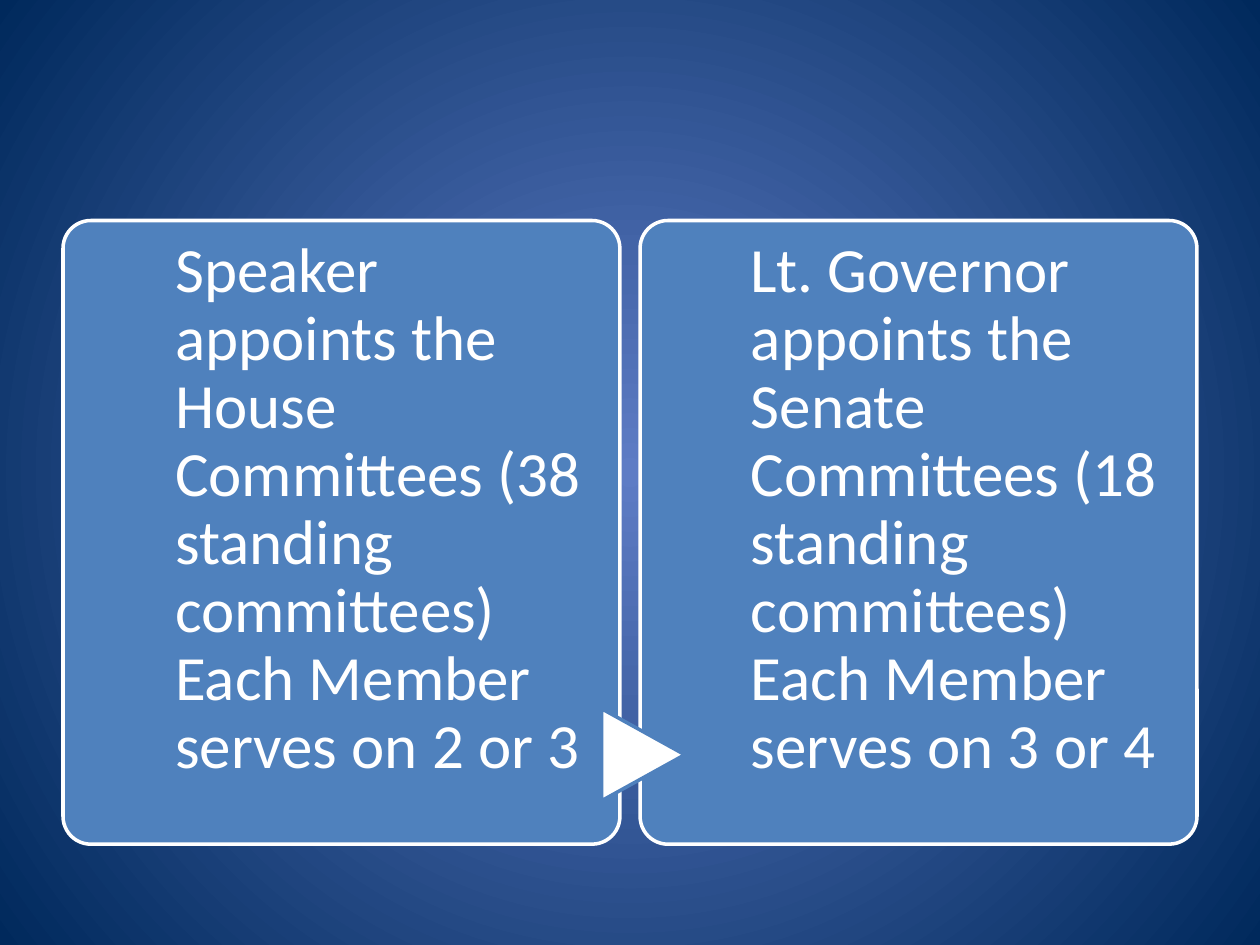
"""Build a slide comparing House and Senate committee appointments."""
from dataclasses import dataclass

from lxml.etree import SubElement
from pptx import Presentation
from pptx.dml.color import RGBColor
from pptx.enum.shapes import MSO_SHAPE
from pptx.enum.text import MSO_ANCHOR, PP_ALIGN
from pptx.oxml.ns import qn
from pptx.shapes.autoshape import Shape
from pptx.slide import Slide
from pptx.util import Pt

COLORS = {
    "glow": "5E7CC5",
    "navy": "00295C",
    "panel": "4F81BD",
    "white": "FFFFFF",
}
PANEL_TOP, PANEL_WIDTH, PANEL_HEIGHT = 126, 318.24, 356.4
TEXT_WIDTH = 236.88


@dataclass(frozen=True)
class Chamber:
    """Position and wording of one chamber's panel."""

    panel_left: float
    text_left: float
    text: str


CHAMBERS = [
    Chamber(36, 100.08, "Speaker appoints the House Committees "
            "(38 standing committees) Each Member serves on 2 or 3"),
    Chamber(365.76, 429.12, "Lt. Governor appoints the Senate Committees "
            "(18 standing committees) Each Member serves on 3 or 4"),
]


def color(name: str) -> RGBColor:
    """Return the named colour."""
    return RGBColor.from_string(COLORS[name])


def paint_background(slide: Slide) -> None:
    """Fill the background with a circular gradient from the centre."""
    fill = slide.background.fill
    fill.gradient()
    for stop, name, position in zip(fill.gradient_stops, ("glow", "navy"), (0, 1)):
        stop.color.rgb = color(name)
        stop.position = position
    gradient = slide.background._cSld.find(".//" + qn("a:gradFill"))
    linear = gradient.find(qn("a:lin"))
    if linear is not None:
        gradient.remove(linear)
    circle = SubElement(gradient, qn("a:path"), {"path": "circle"})
    SubElement(circle, qn("a:fillToRect"), {side: "50000" for side in "ltrb"})


def style_shape(shape: Shape, fill: str, line: str) -> None:
    """Give a shape a flat fill and a two-point outline."""
    shape.shadow.inherit = False
    shape.fill.solid()
    shape.fill.fore_color.rgb = color(fill)
    shape.line.color.rgb = color(line)
    shape.line.width = Pt(2)


def draw_panel(slide: Slide, chamber: Chamber) -> None:
    """Draw the rounded panel of a chamber."""
    panel = slide.shapes.add_shape(
        MSO_SHAPE.ROUNDED_RECTANGLE, Pt(chamber.panel_left), Pt(PANEL_TOP),
        Pt(PANEL_WIDTH), Pt(PANEL_HEIGHT))
    panel.adjustments[0] = 0.05
    style_shape(panel, "panel", "white")


def draw_arrow(slide: Slide) -> None:
    """Draw the triangle that points from the first panel to the second."""
    arrow = slide.shapes.add_shape(
        MSO_SHAPE.FLOWCHART_EXTRACT, Pt(341.28), Pt(407.52), Pt(52.56), Pt(47.52))
    arrow.rotation = 90
    style_shape(arrow, "white", "panel")


def write_text(slide: Slide, chamber: Chamber) -> None:
    """Write the wording of a chamber over its panel."""
    box = slide.shapes.add_textbox(
        Pt(chamber.text_left), Pt(PANEL_TOP), Pt(TEXT_WIDTH), Pt(PANEL_HEIGHT))
    frame = box.text_frame
    frame.word_wrap = True
    frame.vertical_anchor = MSO_ANCHOR.TOP
    frame.margin_left = frame.margin_right = frame.margin_bottom = Pt(0)
    frame.margin_top = Pt(10.08)
    paragraph = frame.paragraphs[0]
    paragraph.text = chamber.text
    paragraph.alignment = PP_ALIGN.LEFT
    paragraph.line_spacing = 0.9
    paragraph.font.name = "Calibri"
    paragraph.font.size = Pt(36)
    paragraph.font.color.rgb = color("white")


def main() -> None:
    """Build and save the presentation."""
    presentation = Presentation()
    presentation.slide_width, presentation.slide_height = Pt(720), Pt(540)
    slide = presentation.slides.add_slide(presentation.slide_layouts[6])
    paint_background(slide)
    for chamber in CHAMBERS:
        draw_panel(slide, chamber)
    draw_arrow(slide)
    for chamber in CHAMBERS:
        write_text(slide, chamber)
    presentation.save("out.pptx")


if __name__ == "__main__":
    main()
